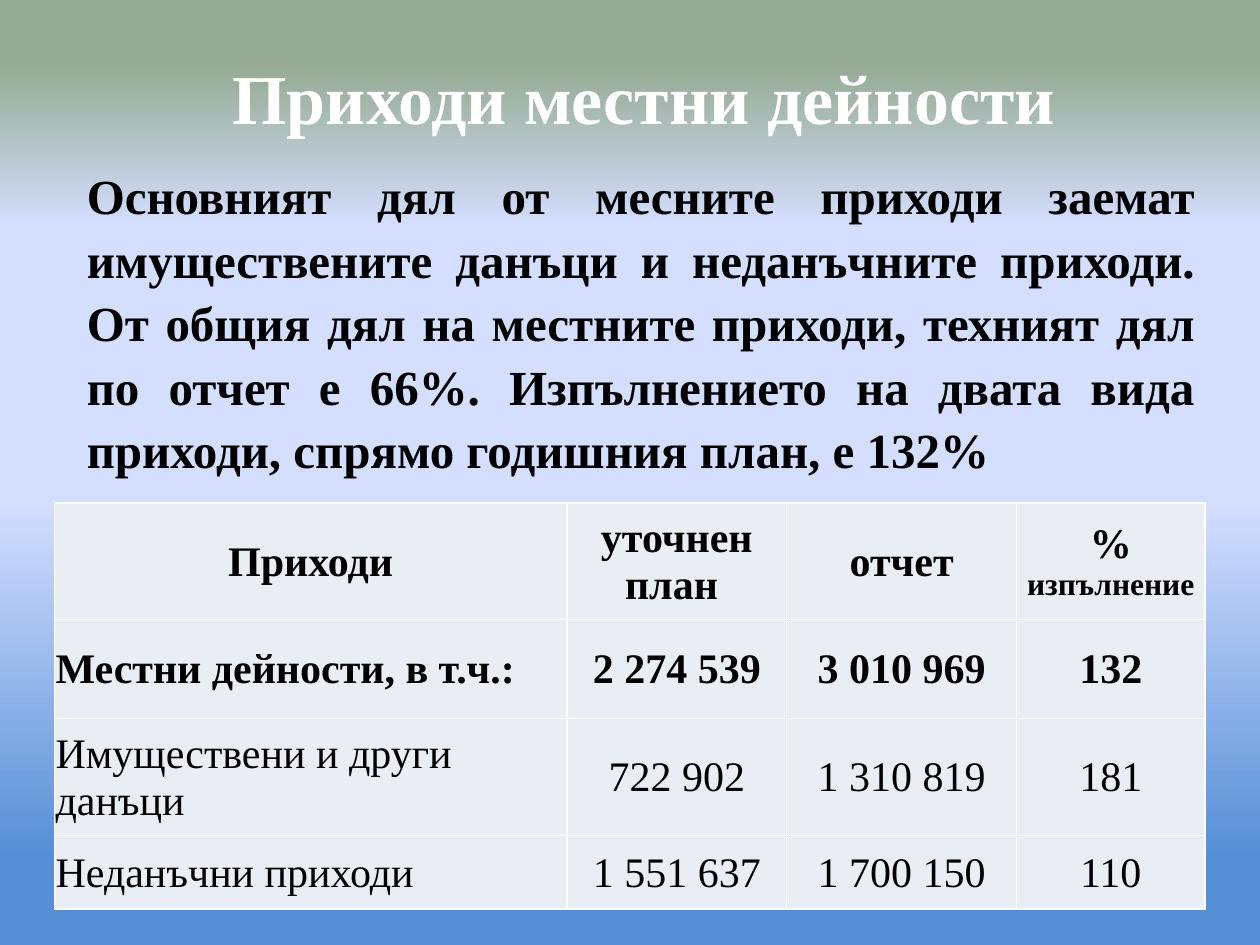
"""Builds the slide on revenue from local activities."""
from dataclasses import dataclass

from lxml import etree
from pptx import Presentation
from pptx import util as u
from pptx.dml.color import RGBColor
from pptx.enum import text as t
from pptx.oxml import ns

Pt = u.Pt


@dataclass(frozen=True)
class Theme:
    font: str = "Times New Roman"
    light: str = "FFFFFF"
    dark: str = "000000"
    cell: str = "E9EDF4"
    sky: tuple = ((9, "558ED5"), (47, "D4DEFF"), (76, "D4DEFF"), (93, "96AB94"))
    title: int = 40
    body: int = 28
    table: int = 24
    small: int = 18
    border: int = 1


def add_run(paragraph, content, *, font, size, color, bold=True):
    run = paragraph.add_run()
    run.text = content
    run.font.name = font
    run.font.size = Pt(size)
    run.font.bold = bold
    run.font.color.rgb = RGBColor.from_string(color)


def add_color(parent, color):
    etree.SubElement(parent, ns.qn("a:srgbClr"), val=color)


class SlideBuilder:
    def __init__(self, slide, theme):
        self.slide = slide
        self.theme = theme

    def background(self):
        fill = self.slide.background.fill
        fill.gradient()
        fill.gradient_angle = 90
        stops = next(self.slide.element.iter(ns.qn("a:gsLst")))
        for stop in list(stops):
            stops.remove(stop)
        for percent, color in self.theme.sky:
            add_color(etree.SubElement(stops, ns.qn("a:gs"), pos=str(percent * 1000)), color)

    def text(self, content, box, *, size, color, align, anchor, spacing=1.0, before=0):
        frame = self.slide.shapes.add_textbox(*map(Pt, box)).text_frame
        frame.word_wrap = True
        frame.vertical_anchor = anchor
        paragraph = frame.paragraphs[0]
        paragraph.alignment = align
        paragraph.line_spacing = spacing
        paragraph.space_before = Pt(before)
        add_run(paragraph, content, font=self.theme.font, size=size, color=color)

    def table(self, rows, left, top, widths, heights, bold_rows):
        box = map(Pt, (left, top, sum(widths), sum(heights)))
        grid = self.slide.shapes.add_table(len(rows), len(widths), *box).table
        for column, width in zip(grid.columns, widths):
            column.width = Pt(width)
        for row, height in zip(grid.rows, heights):
            row.height = Pt(height)
        for r, row in enumerate(rows):
            for c, runs in enumerate(row):
                centred = r == 0 or c > 0
                self.cell(grid.cell(r, c), runs, centred, r < bold_rows)

    def cell(self, cell, runs, centred, bold):
        cell.margin_left = cell.margin_right = cell.margin_top = Pt(0.75)
        cell.margin_bottom = Pt(0)
        cell.vertical_anchor = t.MSO_ANCHOR.MIDDLE
        paragraph = cell.text_frame.paragraphs[0]
        paragraph.alignment = t.PP_ALIGN.CENTER if centred else t.PP_ALIGN.LEFT
        sizes = (self.theme.table, self.theme.small)
        for content, size in zip((runs,) if isinstance(runs, str) else runs, sizes):
            add_run(paragraph, content, font=self.theme.font, size=size,
                    color=self.theme.dark, bold=bold)
        properties = cell._tc.get_or_add_tcPr()
        for side in ("lnL", "lnR", "lnT", "lnB"):
            line = etree.SubElement(properties, ns.qn(f"a:{side}"),
                                    w=str(Pt(self.theme.border)))
            add_color(etree.SubElement(line, ns.qn("a:solidFill")), self.theme.light)
        cell.fill.solid()
        cell.fill.fore_color.rgb = RGBColor.from_string(self.theme.cell)


def main():
    deck = Presentation()
    deck.slide_width, deck.slide_height = Pt(720), Pt(540)
    theme = Theme()
    builder = SlideBuilder(deck.slides.add_slide(deck.slide_layouts[6]), theme)

    builder.background()
    builder.text("Приходи местни дейности", (36, 21.6, 663.8, 61.2), size=theme.title,
                 color=theme.light, align=t.PP_ALIGN.CENTER, anchor=t.MSO_ANCHOR.BOTTOM)
    summary = ("Основният дял от месните приходи заемат имуществените данъци и "
               "неданъчните приходи. От общия дял на местните приходи, техният дял "
               "по отчет е 66%. Изпълнението на двата вида приходи, спрямо годишния "
               "план, е 132%")
    builder.text(summary, (42.5, 88.6, 647.3, 117.4), size=theme.body, color=theme.dark,
                 align=t.PP_ALIGN.JUSTIFY, anchor=t.MSO_ANCHOR.TOP, spacing=1.08, before=5.6)

    revenues = (
        ("Приходи", "уточнен план ", "отчет", ("% ", "изпълнение")),
        ("Местни дейности, в т.ч.:", "2 274 539", "3 010 969", "132"),
        ("Имуществени и други данъци", "722 902", "1 310 819", "181"),
        ("Неданъчни приходи", "1 551 637", "1 700 150", "110"),
    )
    builder.table(revenues, 31, 287.3, (293, 125.5, 131.5, 107.5),
                  (66.8, 56.6, 66.8, 42), bold_rows=2)
    deck.save("out.pptx")


if __name__ == "__main__":
    main()
